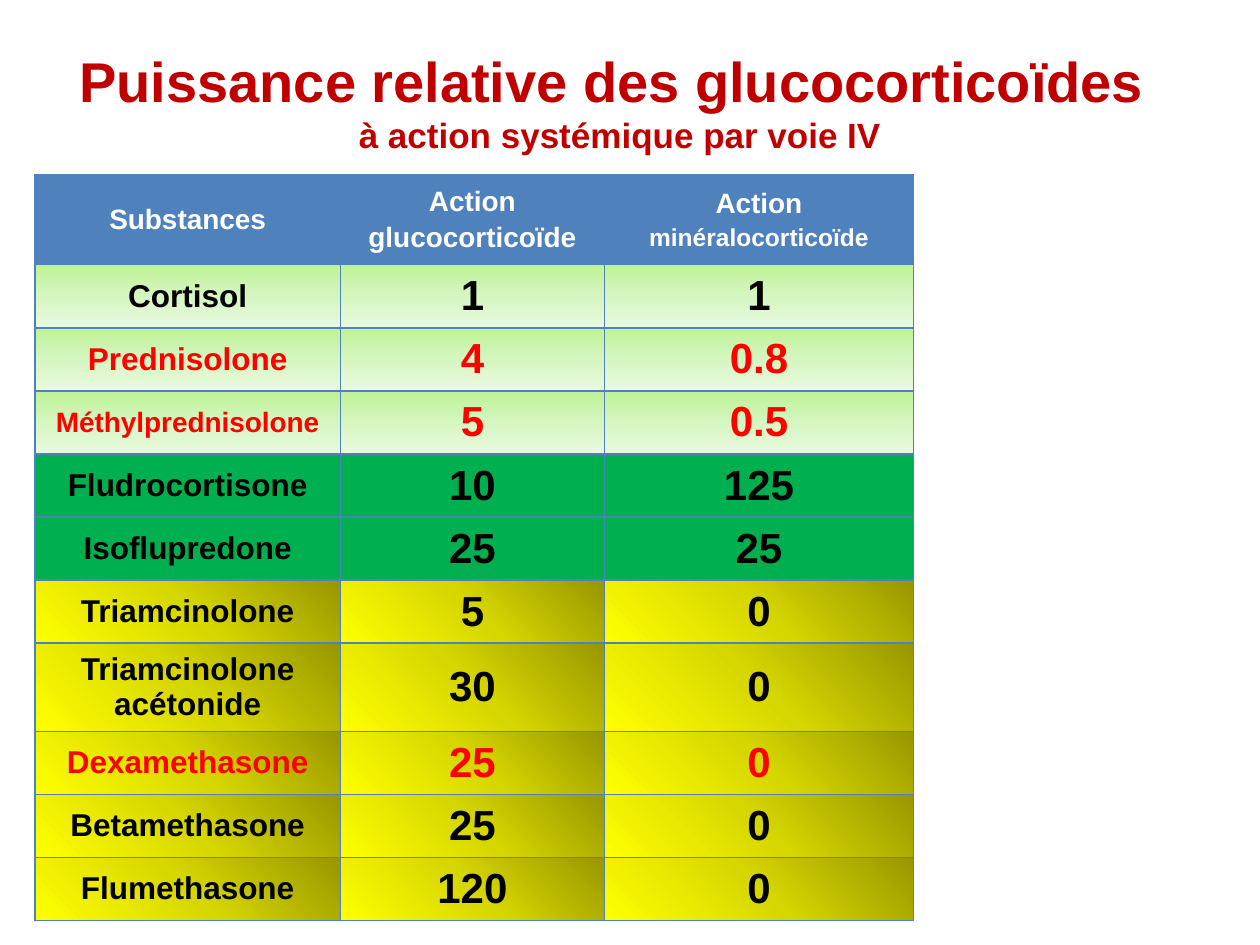
from dataclasses import dataclass

from lxml import etree
from pptx import Presentation
from pptx.dml.color import RGBColor
from pptx.enum import text
from pptx.oxml import ns
from pptx.util import Pt


@dataclass(frozen=True)
class Gradient:
    stops: tuple[str, str, str]
    angle: int


@dataclass(frozen=True)
class Theme:
    font: str = "Arial"
    title: str = "C00000"
    blue: str = "4F81BD"
    white: str = "FFFFFF"
    black: str = "000000"
    red: str = "FF0000"
    green: str = "00B050"
    pale: Gradient = Gradient(("BEF297", "D5F6C0", "EAFAE0"), 90)
    yellow: Gradient = Gradient(("979700", "D7D700", "FFFF00"), 135)
    title_size: int = 32
    subtitle_size: int = 20
    header_size: int = 16
    small_header_size: int = 14
    name_size: int = 18
    long_name_size: int = 16
    value_size: int = 24


THEME = Theme()


@dataclass(frozen=True)
class Substance:
    name: str
    glucocorticoid: str
    mineralocorticoid: str
    fill: str | Gradient
    color: str = THEME.black
    size: int = THEME.name_size
    height: float = 32.4


SUBSTANCES = [
    Substance("Cortisol", "1", "1", THEME.pale),
    Substance("Prednisolone", "4", "0.8", THEME.pale, THEME.red),
    Substance("Méthylprednisolone", "5", "0.5", THEME.pale, THEME.red, THEME.long_name_size),
    Substance("Fludrocortisone", "10", "125", THEME.green),
    Substance("Isoflupredone", "25", "25", THEME.green),
    Substance("Triamcinolone", "5", "0", THEME.yellow),
    Substance("Triamcinolone acétonide", "30", "0", THEME.yellow, height=47.5),
    Substance("Dexamethasone", "25", "0", THEME.yellow, THEME.red),
    Substance("Betamethasone", "25", "0", THEME.yellow),
    Substance("Flumethasone", "120", "0", THEME.yellow),
]
HEADERS = [
    [("Substances", THEME.header_size)],
    [("Action", THEME.header_size), ("glucocorticoïde", THEME.header_size)],
    [("Action", THEME.header_size), ("minéralocorticoïde", THEME.small_header_size)],
]
COLUMN_WIDTHS = [174.5, 151, 176.5]
HEADER_HEIGHT = 51.3


def add_span(para, words: str, *, size: float, color: str) -> None:
    span = para.add_run()
    span.text = words
    span.font.name = THEME.font
    span.font.size = Pt(size)
    span.font.bold = True
    span.font.color.rgb = RGBColor.from_string(color)


def add_node(parent, tag: str, **attributes):
    return etree.SubElement(parent, ns.qn(f"a:{tag}"), **attributes)


def add_solid(parent, color: str) -> None:
    add_node(add_node(parent, "solidFill"), "srgbClr", val=color)


def add_gradient(parent, gradient: Gradient) -> None:
    fill = add_node(parent, "gradFill", rotWithShape="1")
    stops = add_node(fill, "gsLst")
    for index, color in enumerate(gradient.stops):
        add_node(add_node(stops, "gs", pos=str(index * 50000)), "srgbClr", val=color)
    add_node(fill, "lin", ang=str(gradient.angle * 60000), scaled="1")


def paint_cell(cell, fill: str | Gradient) -> None:
    """Set the borders first, then the fill, as the schema orders them."""
    properties = cell._tc.get_or_add_tcPr()
    for side in ("lnL", "lnR", "lnT", "lnB"):
        add_solid(add_node(properties, side, w=str(Pt(1))), THEME.blue)
    if isinstance(fill, Gradient):
        add_gradient(properties, fill)
    else:
        add_solid(properties, fill)


def write_cell(cell, lines: list[tuple[str, int]], color: str, fill: str | Gradient) -> None:
    cell.vertical_anchor = text.MSO_ANCHOR.MIDDLE
    cell.margin_left = cell.margin_right = Pt(7.2)
    cell.margin_top = cell.margin_bottom = Pt(3.6)
    for index, (words, size) in enumerate(lines):
        frame = cell.text_frame
        para = frame.add_paragraph() if index else frame.paragraphs[0]
        para.alignment = text.PP_ALIGN.CENTER
        spacing = add_node(para._p.get_or_add_pPr(), "spcBef")
        add_node(spacing, "spcPct", val="20000")
        add_span(para, words, size=size, color=color)
    paint_cell(cell, fill)


def add_title(page) -> None:
    box = page.shapes.add_textbox(Pt(31), Pt(15), Pt(646.5), Pt(85))
    frame = box.text_frame
    frame.word_wrap = True
    frame.vertical_anchor = text.MSO_ANCHOR.MIDDLE
    para = frame.paragraphs[0]
    para.alignment = text.PP_ALIGN.CENTER
    add_span(para, "Puissance relative des glucocorticoïdes ", size=THEME.title_size, color=THEME.title)
    para.add_line_break()
    add_span(para, "à action systémique par voie IV", size=THEME.subtitle_size, color=THEME.title)


def add_potency_table(page) -> None:
    heights = [HEADER_HEIGHT] + [substance.height for substance in SUBSTANCES]
    table = page.shapes.add_table(
        len(heights), len(COLUMN_WIDTHS), Pt(20), Pt(100), Pt(sum(COLUMN_WIDTHS)), Pt(sum(heights))
    ).table
    for column, width in zip(table.columns, COLUMN_WIDTHS):
        column.width = Pt(width)
    for row, height in zip(table.rows, heights):
        row.height = Pt(height)
    for cell, lines in zip(table.rows[0].cells, HEADERS):
        write_cell(cell, lines, THEME.white, THEME.blue)
    for row_number, substance in enumerate(SUBSTANCES, start=1):
        entries = [
            (substance.name, substance.size),
            (substance.glucocorticoid, THEME.value_size),
            (substance.mineralocorticoid, THEME.value_size),
        ]
        for cell, entry in zip(table.rows[row_number].cells, entries):
            write_cell(cell, [entry], substance.color, substance.fill)


def main() -> None:
    deck = Presentation()
    deck.slide_width, deck.slide_height = Pt(720), Pt(540)
    page = deck.slides.add_slide(deck.slide_layouts[6])
    add_title(page)
    add_potency_table(page)
    deck.save("out.pptx")


if __name__ == "__main__":
    main()
